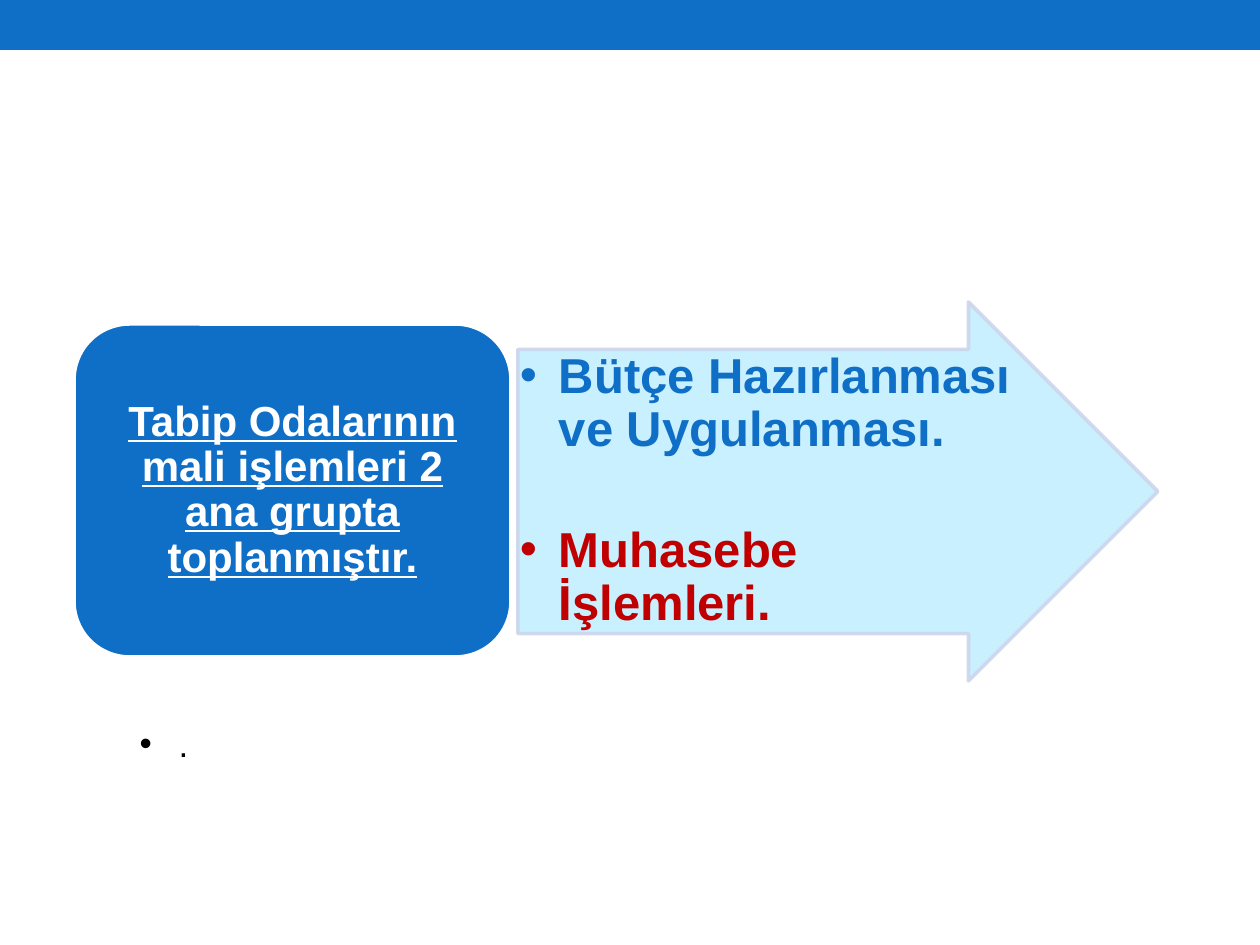
from lxml.etree import SubElement
from pptx import Presentation
from pptx.dml.color import RGBColor
from pptx.enum.shapes import MSO_SHAPE as Preset
from pptx.enum.text import MSO_ANCHOR as Anchor, PP_ALIGN as Align
from pptx.oxml.ns import qn
from pptx.util import Emu, Pt

SCALE = 914400 / 126
COLORS = {
    "blue": "0F6FC6",
    "pale": "C4EFFF",
    "edge": "CCD5EA",
    "red": "C00000",
    "white": "FFFFFF",
    "black": "000000",
}


def px(length):
    """Turn a length in px into EMU."""
    return Emu(round(length * SCALE))


def color(name):
    """Look up a named colour."""
    return RGBColor.from_string(COLORS[name])


def add_block(slide, preset, box, fill, line=None):
    """Add a filled preset shape with an optional outline."""
    shape = slide.shapes.add_shape(preset, *map(px, box))
    shape.shadow.inherit = False
    shape.fill.solid()
    shape.fill.fore_color.rgb = color(fill)
    if line:
        shape.line.color.rgb = color(line)
        shape.line.width = Pt(2.08)
    else:
        shape.line.fill.background()
    return shape


def set_opacity(shape, percent):
    """Make the fill and outline of a shape partly transparent."""
    for element in shape._element.spPr.iter(qn("a:srgbClr")):
        SubElement(element, qn("a:alpha"), val=str(percent * 1000))


def add_text(paragraph, text, size, font_color, bold=False, underline=None):
    """Add one formatted run to a paragraph."""
    run = paragraph.add_run()
    run.text = text
    font = run.font
    font.name, font.size, font.bold = "Arial", Pt(size), bold
    font.underline = underline
    font.color.rgb = color(font_color)


def set_bullet(paragraph, margin):
    """Give a paragraph a round bullet with a hanging indent."""
    properties = paragraph._p.get_or_add_pPr()
    properties.set("marL", str(px(margin)))
    properties.set("indent", str(-px(39)))
    SubElement(properties, qn("a:buFont"), typeface="Arial")
    SubElement(properties, qn("a:buChar"), char="•")


def place_body(slide):
    """Place the body list at the foot of its area."""
    body = slide.placeholders[1]
    body.left, body.top, body.width, body.height = map(px, (64, 165, 1152, 606))
    frame = body.text_frame
    frame.vertical_anchor = Anchor.BOTTOM
    paragraph = frame.paragraphs[0]
    paragraph.level = 1
    paragraph.space_before = Pt(0)
    set_bullet(paragraph, 102)
    add_text(paragraph, ".", 20, "black")


def add_groups(slide):
    """Add the arrow with the two groups of operations."""
    arrow = add_block(slide, Preset.RIGHT_ARROW, (518, 302, 640, 379), "pale", "edge")
    arrow.adjustments[0], arrow.adjustments[1] = 0.75, 0.5
    set_opacity(arrow, 90)
    frame = slide.shapes.add_textbox(*map(px, (518, 349, 499, 285))).text_frame
    frame.word_wrap = True
    frame.margin_left = frame.margin_top = px(2)
    frame.margin_right = frame.margin_bottom = px(2)
    groups = [
        ("Bütçe Hazırlanması ve Uygulanması.", "blue"),
        ("Muhasebe İşlemleri.", "red"),
    ]
    for index, (text, font_color) in enumerate(groups):
        paragraph = frame.add_paragraph() if index else frame.paragraphs[0]
        paragraph.line_spacing = 0.9
        paragraph.space_after = Pt(0 if index else 39)
        set_bullet(paragraph, 39)
        add_text(paragraph, text, 28, font_color, bold=True)


def add_statement(slide):
    """Add the rounded box with the main statement."""
    box = add_block(slide, Preset.ROUNDED_RECTANGLE, (74, 324, 437, 333), "blue", "white")
    frame = box.text_frame
    frame.word_wrap = True
    frame.vertical_anchor = Anchor.MIDDLE
    paragraph = frame.paragraphs[0]
    paragraph.alignment = Align.CENTER
    paragraph.line_spacing = 0.9
    text = "Tabip Odalarının mali işlemleri 2 ana grupta toplanmıştır."
    add_text(paragraph, text, 24, "white", bold=True, underline=True)


def main():
    """Build and save the slide."""
    presentation = Presentation()
    presentation.slide_width, presentation.slide_height = px(1260), px(945)
    slide = presentation.slides.add_slide(presentation.slide_layouts[1])
    title = slide.shapes.title._element
    title.getparent().remove(title)
    add_block(slide, Preset.RECTANGLE, (0, 0, 1260, 50), "blue")
    place_body(slide)
    add_groups(slide)
    add_statement(slide)
    presentation.save("out.pptx")


if __name__ == "__main__":
    main()
